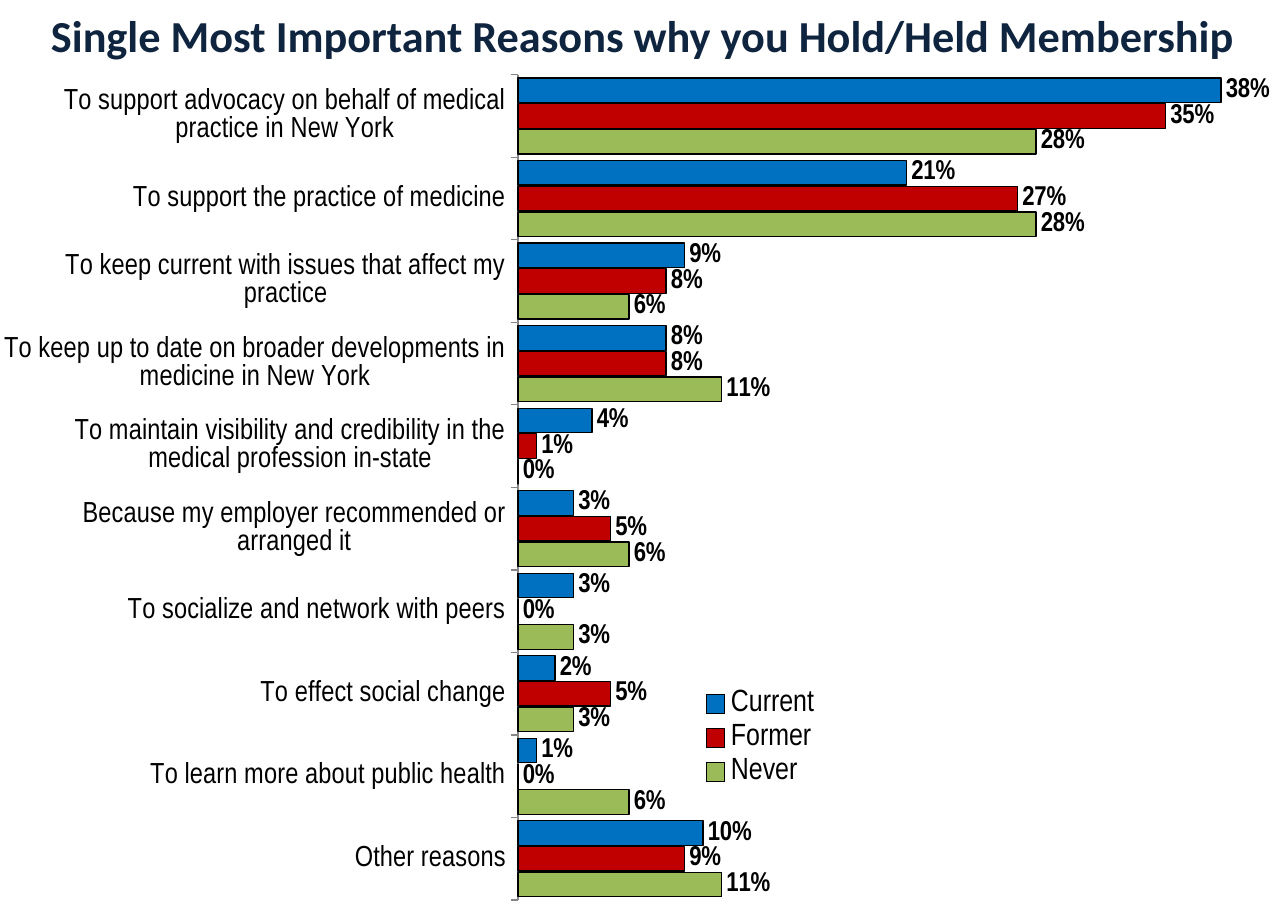
from dataclasses import dataclass

from lxml import etree
from pptx import Presentation
from pptx.chart.data import CategoryChartData
from pptx.dml.color import RGBColor
from pptx.enum.chart import (XL_CHART_TYPE, XL_LABEL_POSITION as LabelPos,
                             XL_LEGEND_POSITION as LegendPos, XL_TICK_MARK as Tick)
from pptx.enum.text import MSO_ANCHOR, MSO_AUTO_SIZE, PP_ALIGN
from pptx.oxml.ns import qn
from pptx.util import Inches, Pt

TITLE = "Single Most Important Reasons why you Hold/Held Membership"
GROUPS = ["Current", "Former", "Never"]
REASONS = [  # top to bottom, percent for each group
    ("To support advocacy on behalf of medical practice in New York", 38, 35, 28),
    ("To support the practice of medicine", 21, 27, 28),
    ("To keep current with issues that affect my practice", 9, 8, 6),
    ("To keep up to date on broader developments in medicine in New York", 8, 8, 11),
    ("To maintain visibility and credibility in the medical profession in-state", 4, 1, 0),
    ("Because my employer recommended or arranged it", 3, 5, 6),
    ("To socialize and network with peers", 3, 0, 3),
    ("To effect social change", 2, 5, 3),
    ("To learn more about public health", 1, 0, 6),
    ("Other reasons", 10, 9, 11),
]
TITLE_BOX = (10, 2, 1267, 65)
CHART_BOX = (4, 69, 1285, 832)
PLOT_AREA = (0.395, 0.007, 0.581, 0.993)
LEGEND_AREA = (0.53, 0.74, 0.11, 0.13)
PX = 914400 / 122.7


@dataclass(frozen=True)
class Theme:
    title_font: str = "Calibri"
    chart_font: str = "Arial Narrow"
    title: str = "0F243E"
    text: str = "000000"
    axis: str = "868686"
    bars: tuple = ("0070C0", "C00000", "9BBB59")
    title_size: int = 26
    label_size: int = 16
    axis_size: int = 17
    legend_size: int = 18


THEME = Theme()


def rgb(code):
    return RGBColor.from_string(code)


def px(box):
    return [round(v * PX) for v in box]


def style(font, name=THEME.chart_font, size=THEME.label_size, color=THEME.text, bold=False):
    font.name, font.size, font.bold = name, Pt(size), bold
    font.color.rgb = rgb(color)


def write(tf, text, align=PP_ALIGN.CENTER, **fmt):
    p = tf.paragraphs[0]
    p.alignment = align
    r = p.add_run()
    r.text = text
    style(r.font, **fmt)


def set_layout(parent, after, area, inner=False):
    """Place a chart part by fractions of the chart, following the child named after."""
    for old in parent.findall(qn("c:layout")):
        parent.remove(old)
    layout = etree.Element(qn("c:layout"))
    manual = etree.SubElement(layout, qn("c:manualLayout"))
    parts = [("layoutTarget", "inner")] if inner else []
    parts += [("xMode", "edge"), ("yMode", "edge"), *zip("xywh", map(str, area))]
    for tag, val in parts:
        etree.SubElement(manual, qn(f"c:{tag}")).set("val", val)
    if after is None:
        parent.insert(0, layout)
    else:
        parent.find(qn(after)).addnext(layout)


def add_title(s):
    sp = s.shapes.title
    sp.left, sp.top, sp.width, sp.height = px(TITLE_BOX)
    tf = sp.text_frame
    tf.word_wrap, tf.auto_size = True, MSO_AUTO_SIZE.NONE
    tf.vertical_anchor = MSO_ANCHOR.MIDDLE
    tf.margin_left = tf.margin_right = tf.margin_top = tf.margin_bottom = 0
    write(tf, TITLE, name=THEME.title_font, size=THEME.title_size,
          color=THEME.title, bold=True)


def add_bars(s):
    # A bar chart stacks its categories and series from the bottom up.
    names, *columns = zip(*reversed(REASONS))
    data = CategoryChartData(number_format="0%")
    data.categories = names
    for group, values in reversed(list(zip(GROUPS, columns))):
        data.add_series(group, [v / 100 for v in values])
    chart = s.shapes.add_chart(XL_CHART_TYPE.BAR_CLUSTERED, *px(CHART_BOX), data).chart
    chart.has_title = False
    style(chart.font, name=THEME.title_font)

    plot = chart.plots[0]
    plot.gap_width, plot.overlap, plot.vary_by_categories = 27, -5, False
    for series, color in zip(plot.series, reversed(THEME.bars)):
        fmt = series.format
        fmt.fill.solid()
        fmt.fill.fore_color.rgb = rgb(color)
        fmt.line.color.rgb, fmt.line.width = rgb(THEME.text), Pt(0.75)
        labels = series.data_labels
        labels.show_value, labels.position = True, LabelPos.OUTSIDE_END
        labels.number_format, labels.number_format_is_linked = "0%", False
        style(labels.font, bold=True)

    cat, val = chart.category_axis, chart.value_axis
    cat.major_tick_mark, cat.has_major_gridlines = Tick.OUTSIDE, False
    cat.format.line.color.rgb, cat.format.line.width = rgb(THEME.axis), Pt(0.75)
    style(cat.tick_labels.font, size=THEME.axis_size)
    val.minimum_scale, val.maximum_scale, val.major_unit = 0, 0.4, 0.4
    val.has_major_gridlines, val.visible = False, False

    chart.has_legend = True
    legend = chart.legend
    legend.position, legend.include_in_layout = LegendPos.RIGHT, False
    style(legend.font, size=THEME.legend_size)
    plot_area = chart.element.find(".//" + qn("c:plotArea"))
    set_layout(plot_area, None, PLOT_AREA, inner=True)
    set_layout(chart.element.find(".//" + qn("c:legend")), "c:legendPos", LEGEND_AREA)


def main():
    prs = Presentation()
    prs.slide_width, prs.slide_height = Inches(10.5), Inches(7.5)
    s = prs.slides.add_slide(prs.slide_layouts[5])
    add_title(s)
    add_bars(s)
    prs.save("out.pptx")


if __name__ == "__main__":
    main()
